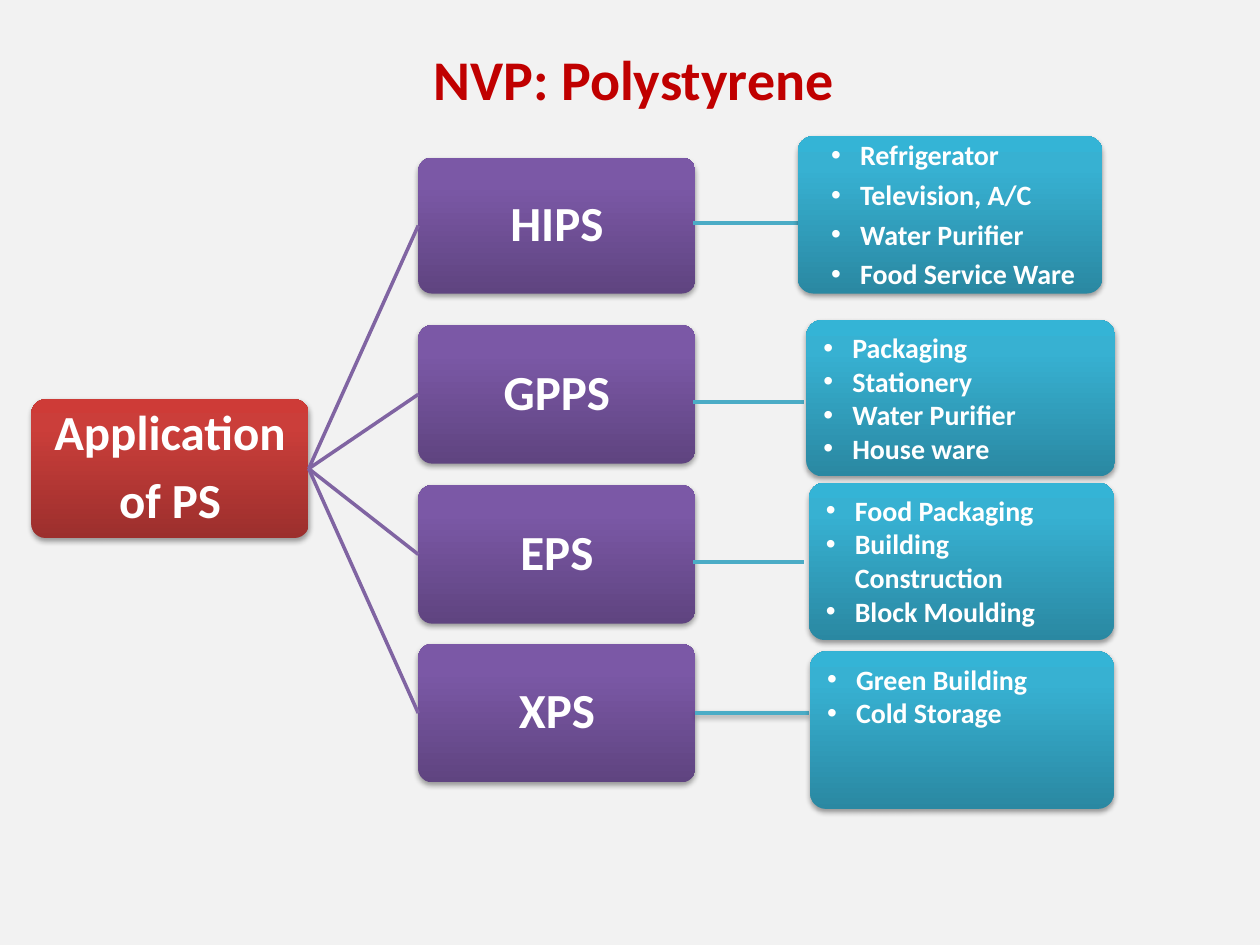
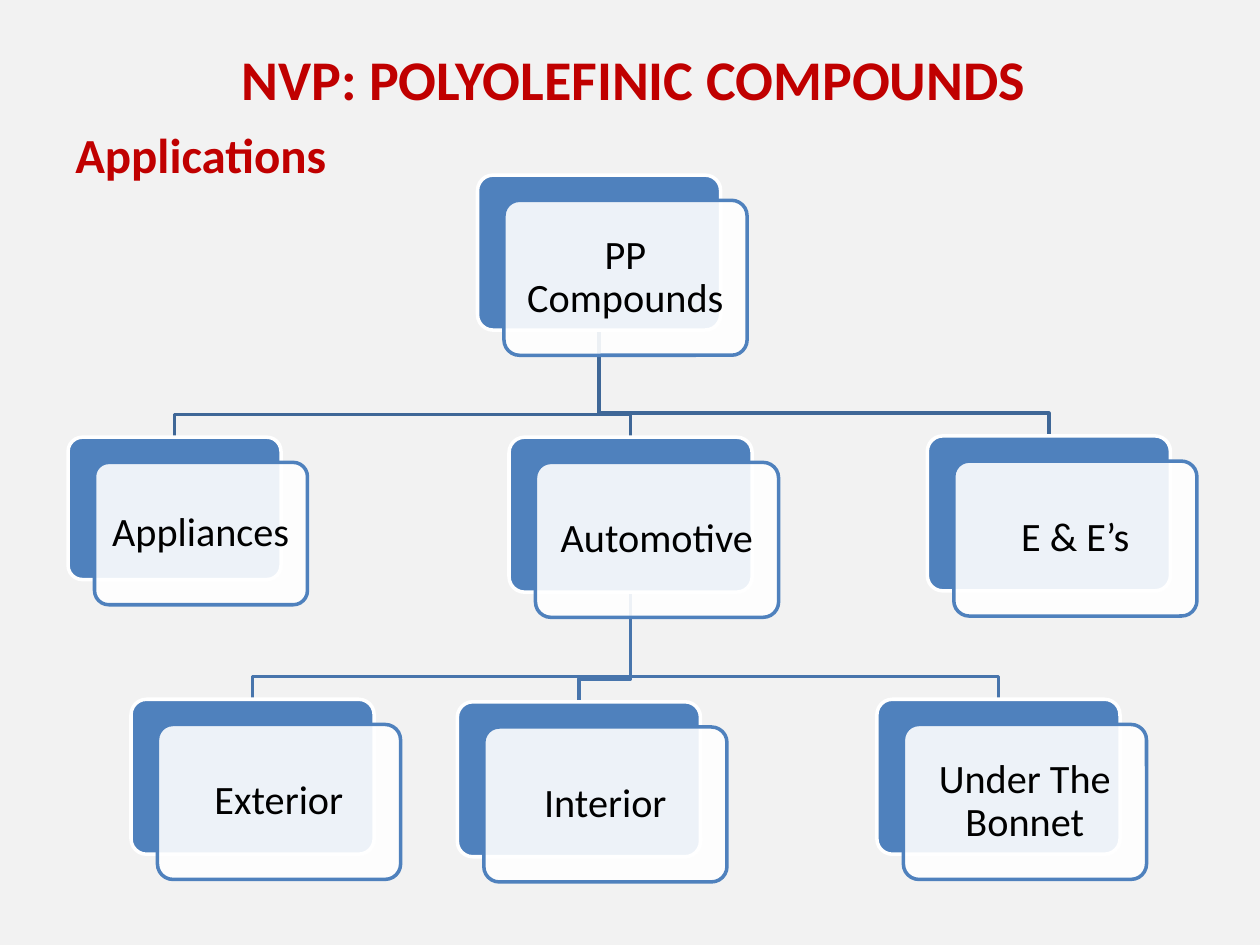
from copy import deepcopy

from pptx import Presentation
from pptx.dml.color import RGBColor
from pptx.enum import shapes, text
from pptx.oxml import ns
from pptx.util import Inches, Pt
from lxml import etree

FONT = "Calibri"
COMPANY = "NVP"
PAPER = RGBColor(0xF2, 0xF2, 0xF2)
WHITE = RGBColor(0xFF, 0xFF, 0xFF)
BLACK = RGBColor(0x00, 0x00, 0x00)
HEADING_RED = RGBColor(0xC0, 0x00, 0x00)
PURPLE_LINE = RGBColor(0x80, 0x64, 0xA2)
TEAL_LINE = RGBColor(0x4B, 0xAC, 0xC6)
CARD_BLUE = RGBColor(0x4F, 0x81, 0xBD)
UPPER_LINE = RGBColor(0x3F, 0x67, 0x97)
LOWER_LINE = RGBColor(0x48, 0x75, 0xAC)

# Gradient colours from the bottom of a box to its top.
STOPS = (0, 0.8, 1)
RED = [RGBColor(0x9C, 0x2F, 0x2D), RGBColor(0xCB, 0x3E, 0x3A), RGBColor(0xCE, 0x3B, 0x37)]
PURPLE = [RGBColor(0x5F, 0x44, 0x80), RGBColor(0x7B, 0x58, 0xA6), RGBColor(0x7C, 0x57, 0xA8)]
TEAL = [RGBColor(0x2A, 0x88, 0xA2), RGBColor(0x37, 0xB1, 0xD2), RGBColor(0x34, 0xB4, 0xD6)]

CENTER = text.PP_ALIGN.CENTER
LEFT = text.PP_ALIGN.LEFT
MIDDLE = text.MSO_ANCHOR.MIDDLE
TOP = text.MSO_ANCHOR.TOP

# Grade, top and height of its box, height of its link,
# box of its uses, uses
GRADES = [
    ("HIPS", 1.25, 1.08, 1.77, (6.33, 1.08, 2.42, 1.25),
     ["Refrigerator", "Television, A/C", "Water Purifier", "Food Service Ware"]),
    ("GPPS", 2.58, 1.1, 3.19, (6.4, 2.54, 2.45, 1.24),
     ["Packaging", "Stationery", "Water Purifier", "House ware"]),
    ("EPS", 3.85, 1.1, 4.46, (6.42, 3.83, 2.42, 1.25),
     ["Food Packaging", "Building Construction", "Block Moulding"]),
    ("XPS", 5.11, 1.1, 5.66, (6.43, 5.17, 2.41, 1.25),
     ["Green Building", "Cold Storage"]),
]

CARD_SIZE = (1.93, 1.23)
CARDS = {
    "PP Compounds": (3.79, 1.39, *CARD_SIZE),
    "Automotive": (4.04, 3.47, *CARD_SIZE),
    "Exterior": (1.04, 5.55, *CARD_SIZE),
    "Interior": (3.63, 5.57, *CARD_SIZE),
    "Under The Bonnet": (6.96, 5.55, *CARD_SIZE),
    "Appliances": (0.54, 3.47, 1.69, 1.13),
    "E & E’s": (7.36, 3.46, *CARD_SIZE),
}
BRANCHES = [
    ("PP Compounds", UPPER_LINE, ["E & E’s", "Appliances", "Automotive"]),
    ("Automotive", LOWER_LINE, ["Under The Bonnet", "Interior", "Exterior"]),
]


def inches(*lengths):
    return [Inches(length) for length in lengths]


def write(shape, lines, size, color, bold=True, align=CENTER, anchor=MIDDLE,
          insets=(0, 0, 0, 0), spacing=0.9, gap=0, bullets=False):
    """Fill the shape with one paragraph per line; insets run left, top, right, bottom."""
    frame = shape.text_frame
    frame.word_wrap = True
    frame.auto_size = text.MSO_AUTO_SIZE.NONE
    frame.vertical_anchor = anchor
    (frame.margin_left, frame.margin_top,
     frame.margin_right, frame.margin_bottom) = inches(*insets)
    frame.text = "\n".join(lines)
    for index, para in enumerate(frame.paragraphs):
        if bullets:
            add_bullet(para)
        para.alignment = align
        para.line_spacing = spacing
        para.space_before = Pt(gap if index else 0)
        for span in para.runs:
            span.font.name = FONT
            span.font.size = Pt(size)
            span.font.bold = bold
            span.font.color.rgb = color


def add_bullet(para):
    props = para._p.get_or_add_pPr()
    props.set("marL", str(Inches(0.23)))
    props.set("indent", str(-Inches(0.23)))
    etree.SubElement(props, ns.qn("a:buFont"), typeface="Arial")
    etree.SubElement(props, ns.qn("a:buChar"), char="•")


def add_shadow(shape):
    props = shape.element.spPr
    effects = props.find(ns.qn("a:effectLst"))
    if effects is None:
        effects = etree.SubElement(props, ns.qn("a:effectLst"))
    shadow = etree.SubElement(effects, ns.qn("a:outerShdw"), blurRad=str(Pt(3.1)),
                              dist=str(Pt(1.7)), dir="5400000", rotWithShape="0")
    color = etree.SubElement(shadow, ns.qn("a:srgbClr"), val="000000")
    etree.SubElement(color, ns.qn("a:alpha"), val="37000")


def add_round_box(page, box):
    shape = page.shapes.add_shape(shapes.MSO_SHAPE.ROUNDED_RECTANGLE, *inches(*box))
    shape.adjustments[0] = 0.1
    shape.shadow.inherit = False
    return shape


def add_gradient_box(page, box, colors):
    shape = add_round_box(page, box)
    shape.line.fill.background()
    fill = shape.fill
    fill.gradient()
    fill.gradient_angle = 90
    stop_list = shape.element.spPr.find(".//" + ns.qn("a:gsLst"))
    stop_list.append(deepcopy(stop_list[0]))
    for stop, position, color in zip(fill.gradient_stops, STOPS, colors):
        stop.position = position
        stop.color.rgb = color
    add_shadow(shape)
    return shape


def add_link(page, start, end, color):
    link = page.shapes.add_connector(shapes.MSO_CONNECTOR.STRAIGHT,
                                     *inches(*start, *end))
    link.line.color.rgb = color
    link.line.width = Pt(2)
    etree.SubElement(link.element.spPr, ns.qn("a:effectLst"))
    return link


def add_page(deck, subject):
    page = deck.slides.add_slide(deck.slide_layouts[5])
    title = page.shapes.title
    title.left, title.top, title.width, title.height = inches(0.17, 0.41, 9.72, 0.48)
    write(title, [f"{COMPANY}: {subject}"], 32, HEADING_RED)
    return page


def add_grade(page, root, grade, top, height, link_y, uses_box, uses):
    """Draw one row: the grade box, its link to the root, and its uses."""
    grade_box = add_gradient_box(page, (3.32, top, 2.2, height), PURPLE)
    write(grade_box, [grade], 28, WHITE)
    branch = add_link(page, (2.45, 3.72), (3.32, top + height / 2), PURPLE_LINE)
    branch.begin_connect(root, 3)
    branch.end_connect(grade_box, 1)

    link = add_link(page, (5.5, link_y), (6.42 if grade == "XPS" else 6.38, link_y), TEAL_LINE)
    if abs(link_y - top - height / 2) < 0.01:
        link.begin_connect(grade_box, 3)
        add_shadow(link)

    uses_shape = add_gradient_box(page, uses_box, TEAL)
    if grade == "HIPS":
        layout = dict(anchor=MIDDLE, insets=(0.23, 0.02, 0.15, 0), gap=5.5)
    else:
        layout = dict(anchor=TOP, insets=(0.1, 0.05, 0.15, 0.05), spacing=1.0)
    write(uses_shape, uses, 16, WHITE, align=LEFT, bullets=True, **layout)


def add_polystyrene_page(deck):
    page = add_page(deck, "Polystyrene")
    root = add_gradient_box(page, (0.25, 3.17, 2.2, 1.1), RED)
    write(root, ["Application", "of PS"], 28, WHITE, gap=8.7)
    for row in GRADES:
        add_grade(page, root, *row)


def add_branch(page, parent, child, color):
    """Draw an elbow line from the bottom of one card to the top of another."""
    left, top, width, height = parent
    start_x, start_y = left + width / 2, top + height
    end_x, end_y = child[0] + child[2] / 2, child[1]
    bend_y = end_y - 0.18
    outline = page.shapes.build_freeform(*inches(start_x, start_y))
    outline.add_line_segments(
        [inches(*point) for point in
         ((start_x, bend_y), (end_x, bend_y), (end_x, end_y))], close=False)
    branch = outline.convert_to_shape()
    branch.fill.background()
    branch.line.color.rgb = color
    branch.line.width = Pt(2)
    branch.shadow.inherit = False


def add_card(page, label, box):
    """Draw a blue card with a translucent white label card set off over it."""
    left, top, width, height = box
    back = add_round_box(page, box)
    front = add_round_box(page, (left + 0.21, top + 0.2, width, height))
    for shape, fill, line in ((back, CARD_BLUE, WHITE), (front, WHITE, CARD_BLUE)):
        shape.fill.solid()
        shape.fill.fore_color.rgb = fill
        shape.line.color.rgb = line
        shape.line.width = Pt(2)
    color = front.element.spPr.find(ns.qn("a:solidFill"))[0]
    etree.SubElement(color, ns.qn("a:alpha"), val="90000")
    write(front, [label], 23, BLACK, bold=False, insets=(0.1, 0.1, 0.1, 0.1))


def add_compounds_page(deck):
    page = add_page(deck, "POLYOLEFINIC COMPOUNDS")
    subtitle = page.shapes.add_textbox(*inches(0.5, 0.75, 9, 0.95))
    write(subtitle, ["Applications"], 28, HEADING_RED, align=LEFT,
          insets=(0.1, 0.05, 0.1, 0.05), spacing=1.0)
    for parent, color, children in BRANCHES:
        for child in children:
            add_branch(page, CARDS[parent], CARDS[child], color)
    for label, box in CARDS.items():
        add_card(page, label, box)


def main():
    deck = Presentation()
    deck.slide_width, deck.slide_height = inches(10, 7.5)
    background = deck.slide_master.background.fill
    background.solid()
    background.fore_color.rgb = PAPER
    add_polystyrene_page(deck)
    add_compounds_page(deck)
    deck.save("out.pptx")


if __name__ == "__main__":
    main()
